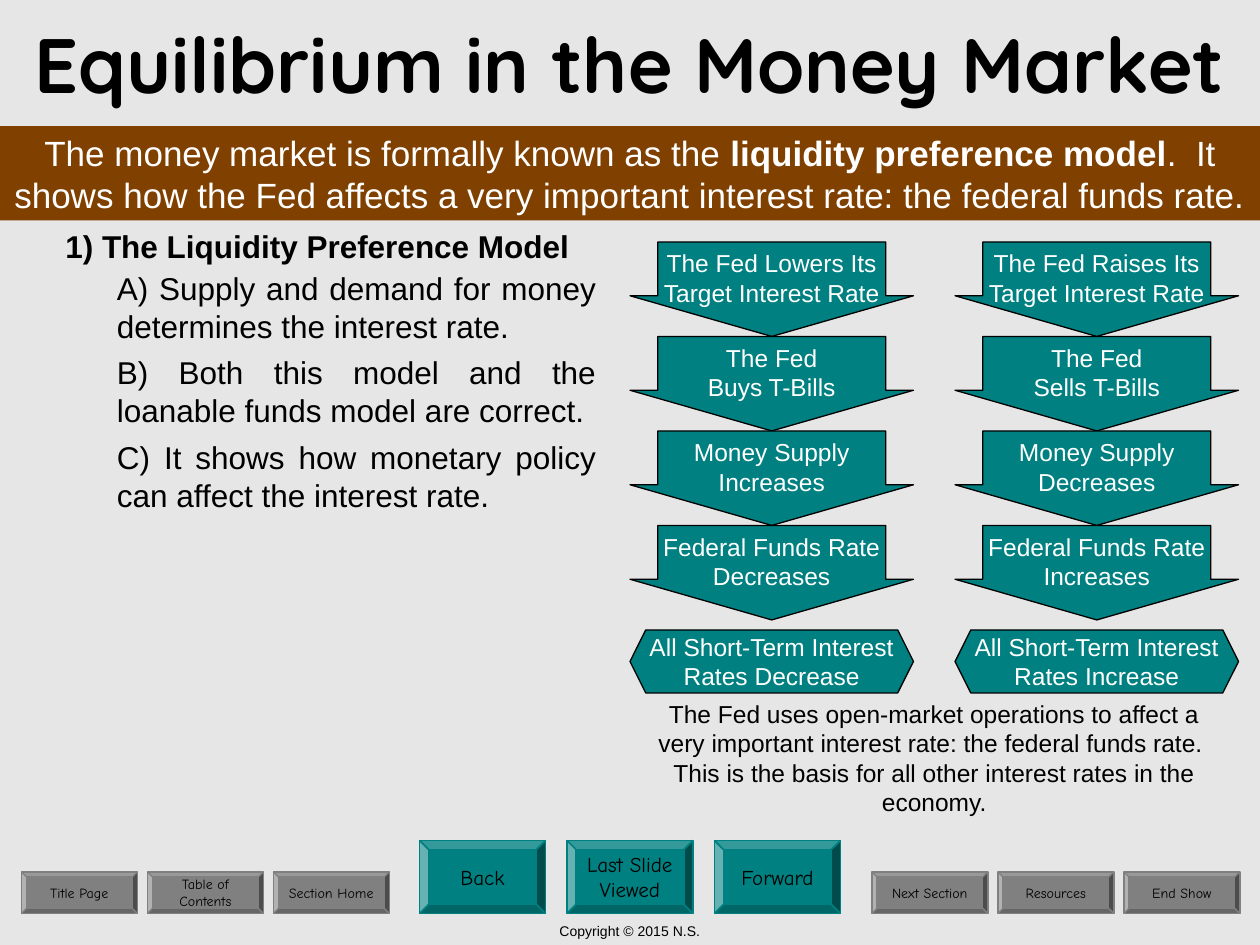
from pptx import Presentation
from pptx.dml.color import RGBColor
from pptx.enum.shapes import MSO_SHAPE as SHAPE
from pptx.enum.text import MSO_ANCHOR as ANCHOR, PP_ALIGN as ALIGN
from pptx.util import Inches, Pt

COLORS = {
    "background": "E6E6E6",
    "banner": "804000",
    "teal": "008080",
    "gray": "808080",
    "black": "000000",
    "white": "FFFFFF",
}

POINTS = [
    "A) Supply and demand for money determines the interest rate.",
    "B) Both this model and the loanable funds model are correct.",
    "C) It shows how monetary policy can affect the interest rate.",
]

# Left edge of each chain, its arrow steps and its final result
CHAINS = [
    (5, ["The Fed Lowers Its\nTarget Interest Rate", "The Fed\nBuys T-Bills",
         "Money Supply\nIncreases", "Federal Funds Rate\nDecreases"],
     "All Short-Term Interest\nRates Decrease"),
    (7.58, ["The Fed Raises Its\nTarget Interest Rate", "The Fed\nSells T-Bills",
            "Money Supply\nDecreases", "Federal Funds Rate\nIncreases"],
     "All Short-Term Interest\nRates Increase"),
]

MAIN_BUTTONS = ["Back", "Last Slide\nViewed", "Forward"]
SIDE_BUTTONS = [
    (0.17, ["Title Page", "Table of\nContents", "Section Home"]),
    (6.92, ["Next Section", "Resources", "End Show"]),
]


def rgb(name):
    return RGBColor.from_string(COLORS[name])


def format_text(tf, size, color="black", font="Arial", bold=False, align=ALIGN.CENTER):
    for p in tf.paragraphs:
        p.alignment = align
        for r in p.runs:
            r.font.size = Pt(size)
            r.font.name = font
            r.font.bold = bold
            r.font.color.rgb = rgb(color)


def add_text(s, box, text, size, anchor=ANCHOR.MIDDLE, **style):
    tf = s.shapes.add_textbox(*map(Inches, box)).text_frame
    tf.word_wrap = True
    tf.vertical_anchor = anchor
    tf.text = text
    format_text(tf, size, **style)


def add_box(s, kind, box, fill, line=None, line_width=0.75):
    sp = s.shapes.add_shape(kind, *map(Inches, box))
    sp.shadow.inherit = False
    sp.fill.solid()
    sp.fill.fore_color.rgb = rgb(fill)
    if line:
        sp.line.color.rgb = rgb(line)
        sp.line.width = Pt(line_width)
    else:
        sp.line.fill.background()
    return sp


def add_label(sp, text, size, anchor=ANCHOR.MIDDLE, **style):
    tf = sp.text_frame
    tf.word_wrap = False
    tf.vertical_anchor = anchor
    tf.text = text
    format_text(tf, size, **style)


def add_button(s, box, text, color, size, line_width):
    sp = add_box(s, SHAPE.BEVEL, box, color, color, line_width)
    sp.adjustments[0] = 0.125
    add_label(sp, text, size, font="Comic Neue")


def add_chain(s, left, steps, result):
    for i, step in enumerate(steps):
        arrow = add_box(s, SHAPE.DOWN_ARROW, (left, 1.92 + 0.75 * i, 2.25, 0.75),
                        "teal", "black")
        arrow.adjustments[0] = 0.804
        arrow.adjustments[1] = 0.43
        add_label(arrow, step, 14, anchor=ANCHOR.TOP, color="white")
    end = add_box(s, SHAPE.HEXAGON, (left, 5, 2.25, 0.5), "teal", "black")
    add_label(end, result, 14, color="white")


def add_banner(s):
    sp = add_box(s, SHAPE.RECTANGLE, (0, 1, 10, 0.75), "banner")
    tf = sp.text_frame
    tf.word_wrap = True
    tf.vertical_anchor = ANCHOR.MIDDLE
    p = tf.paragraphs[0]
    for text in ("The money market is formally known as the ",
                 "liquidity preference model",
                 ".  It shows how the Fed affects a very important interest rate: "
                 "the federal funds rate."):
        p.add_run().text = text
    format_text(tf, 20, color="white")
    p.runs[1].font.bold = True


def add_navigation(s):
    for i, text in enumerate(MAIN_BUTTONS):
        add_button(s, (3.33 + 1.17 * i, 6.67, 1, 0.58), text, "teal", 12, 1)
    for left, texts in SIDE_BUTTONS:
        for i, text in enumerate(texts):
            add_button(s, (left + i, 6.92, 0.92, 0.33), text, "gray", 8, 0.75)


def main():
    prs = Presentation()
    prs.slide_width, prs.slide_height = Inches(10), Inches(7.5)
    s = prs.slides.add_slide(prs.slide_layouts[6])
    s.background.fill.solid()
    s.background.fill.fore_color.rgb = rgb("background")

    # Footer and navigation
    add_text(s, (0, 7.27, 10, 0.23), "Copyright © 2015 N.S.", 8)
    add_navigation(s)

    # Title and banner
    add_text(s, (0, 0, 10, 1), "Equilibrium in the Money Market", 44,
             font="Quicksand", bold=True)
    add_banner(s)

    # Outline on the left
    add_text(s, (0.42, 1.75, 4.42, 0.4), "1) The Liquidity Preference Model", 18,
             bold=True, align=ALIGN.JUSTIFY)
    for i, point in enumerate(POINTS):
        add_text(s, (0.83, 2.08 + 0.67 * i, 4, 0.71), point, 18, align=ALIGN.JUSTIFY)

    # Cause-and-effect chains with their summary
    for left, steps, result in CHAINS:
        add_chain(s, left, steps, result)
    add_text(s, (5, 5.61, 4.83, 0.81),
             "The Fed uses open-market operations to affect a very important "
             "interest rate: the federal funds rate.  This is the basis for all "
             "other interest rates in the economy.", 14)

    prs.save("out.pptx")


if __name__ == "__main__":
    main()
